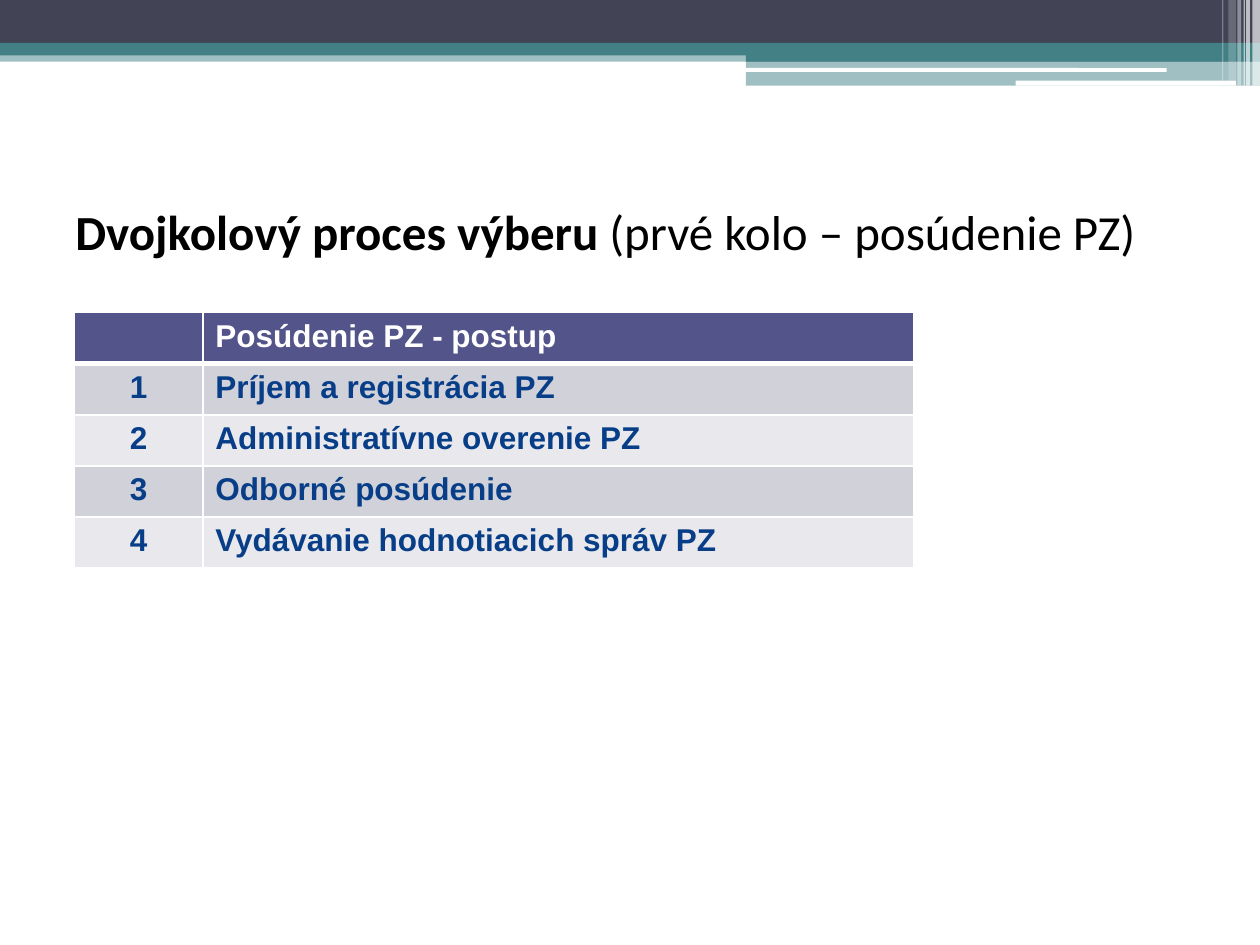
from dataclasses import dataclass

from lxml.etree import SubElement
from pptx import Presentation
from pptx.dml.color import RGBColor as Rgb
from pptx.enum.shapes import MSO_SHAPE as Shape
from pptx.enum.text import MSO_ANCHOR as Anchor, PP_ALIGN as Align
from pptx.oxml.ns import qn
from pptx.util import Inches, Pt


@dataclass(frozen=True)
class Theme:
    white: str = "FFFFFF"
    black: str = "000000"
    slate: str = "424456"
    teal: str = "438086"
    header: str = "53548A"
    bands: tuple = ("D1D1DA", "E9E9ED")
    navy: str = "073E87"
    title_font: str = "Calibri"
    table_font: str = "Arial"
    title_size: int = 28
    table_size: int = 18
    thin: int = 1
    thick: int = 3


def write(paragraph, text, *, font, size, color, bold=False, align=Align.LEFT):
    paragraph.alignment = align
    run = paragraph.add_run()
    run.text = text
    run.font.name = font
    run.font.size = Pt(size)
    run.font.bold = bold
    run.font.color.rgb = Rgb.from_string(color)


class SlideBuilder:
    COLUMNS, ROWS = 100, 75

    def __init__(self, deck, theme):
        self.theme = theme
        self.cell_width = deck.slide_width / self.COLUMNS
        self.cell_height = deck.slide_height / self.ROWS
        self.slide = deck.slides.add_slide(deck.slide_layouts[6])

    def box(self, column, row, columns, rows):
        return (round(column * self.cell_width), round(row * self.cell_height),
                round(columns * self.cell_width), round(rows * self.cell_height))

    def bar(self, place, color, opacity=100, kind=Shape.RECTANGLE):
        bar = self.slide.shapes.add_shape(kind, *self.box(*place))
        bar.shadow.inherit = False
        bar.line.fill.background()
        bar.fill.solid()
        bar.fill.fore_color.rgb = Rgb.from_string(color)
        if opacity < 100:
            tint = bar.fill._xPr.find(qn("a:solidFill"))[0]
            SubElement(tint, qn("a:alpha"), val=str(opacity * 1000))

    def title(self, place, strong, plain):
        frame = self.slide.shapes.add_textbox(*self.box(*place)).text_frame
        frame.word_wrap = True
        frame.vertical_anchor = Anchor.MIDDLE
        for text, bold in ((strong, True), (plain, False)):
            write(frame.paragraphs[0], text, font=self.theme.title_font,
                  size=self.theme.title_size, color=self.theme.black, bold=bold)

    def border(self, cell, side, points):
        line = SubElement(cell._tc.get_or_add_tcPr(), qn(f"a:ln{side}"), w=str(Pt(points)))
        SubElement(SubElement(line, qn("a:solidFill")), qn("a:srgbClr"), val=self.theme.white)

    def table(self, place, widths, records):
        theme = self.theme
        table = self.slide.shapes.add_table(
            len(records), len(widths), *self.box(*place)).table
        table.first_row = table.horz_banding = False
        for column, width in zip(table.columns, widths):
            column.width = round(width * self.cell_width)
        for row, record in enumerate(records):
            is_header = row == 0
            fill = theme.header if is_header else theme.bands[(row - 1) % 2]
            for column, text in enumerate(record):
                cell = table.cell(row, column)
                for side in "LRTB":
                    under_header = (row, side) in ((0, "B"), (1, "T"))
                    self.border(cell, side, theme.thick if under_header else theme.thin)
                cell.fill.solid()
                cell.fill.fore_color.rgb = Rgb.from_string(fill)
                if text:
                    write(cell.text_frame.paragraphs[0], text, font=theme.table_font,
                          size=theme.table_size, bold=True,
                          color=theme.white if is_header else theme.navy,
                          align=Align.LEFT if column else Align.CENTER)


def main():
    deck = Presentation()
    deck.slide_width, deck.slide_height = Inches(10), Inches(7.5)
    theme = Theme()
    page = SlideBuilder(deck, theme)

    page.bar((0, 4, 100, 0.9), theme.teal, 50)
    page.bar((0, 0, 100, 3.4), theme.slate)
    page.bar((0, 3.4, 100, 1), theme.teal)
    page.bar((59.2, 3.9, 40.8, 1), theme.teal)
    page.bar((59.2, 4.85, 40.8, 1.95), theme.teal, 50)
    for highlight in ((59.1, 5.4, 33.5, 0.3), (80.6, 6.4, 17.5, 0.4)):
        page.bar(highlight, theme.white, kind=Shape.ROUNDED_RECTANGLE)
    for column, width, height, opacity in (
            (99.4, 0.6, 6.8, 65), (98.9, 0.3, 6.8, 65), (98.7, 0.1, 6.8, 60),
            (98.2, 0.3, 6.8, 40), (97.5, 0.6, 6.4, 20), (97, 0.1, 6.4, 30)):
        page.bar((column, 0, width, height), theme.white, opacity)

    page.title((5, 12.5, 90, 11.7),
               "Dvojkolový proces výberu ", "(prvé kolo – posúdenie PZ)")
    steps = ("Príjem a registrácia PZ", "Administratívne overenie PZ",
             "Odborné posúdenie", "Vydávanie hodnotiacich správ PZ")
    numbered = [(str(number), step) for number, step in enumerate(steps, 1)]
    page.table((5.9, 24.8, 66.6, 20.3), (10.2, 56.4),
               [("", "Posúdenie PZ - postup"), *numbered])

    deck.save("out.pptx")


if __name__ == "__main__":
    main()
